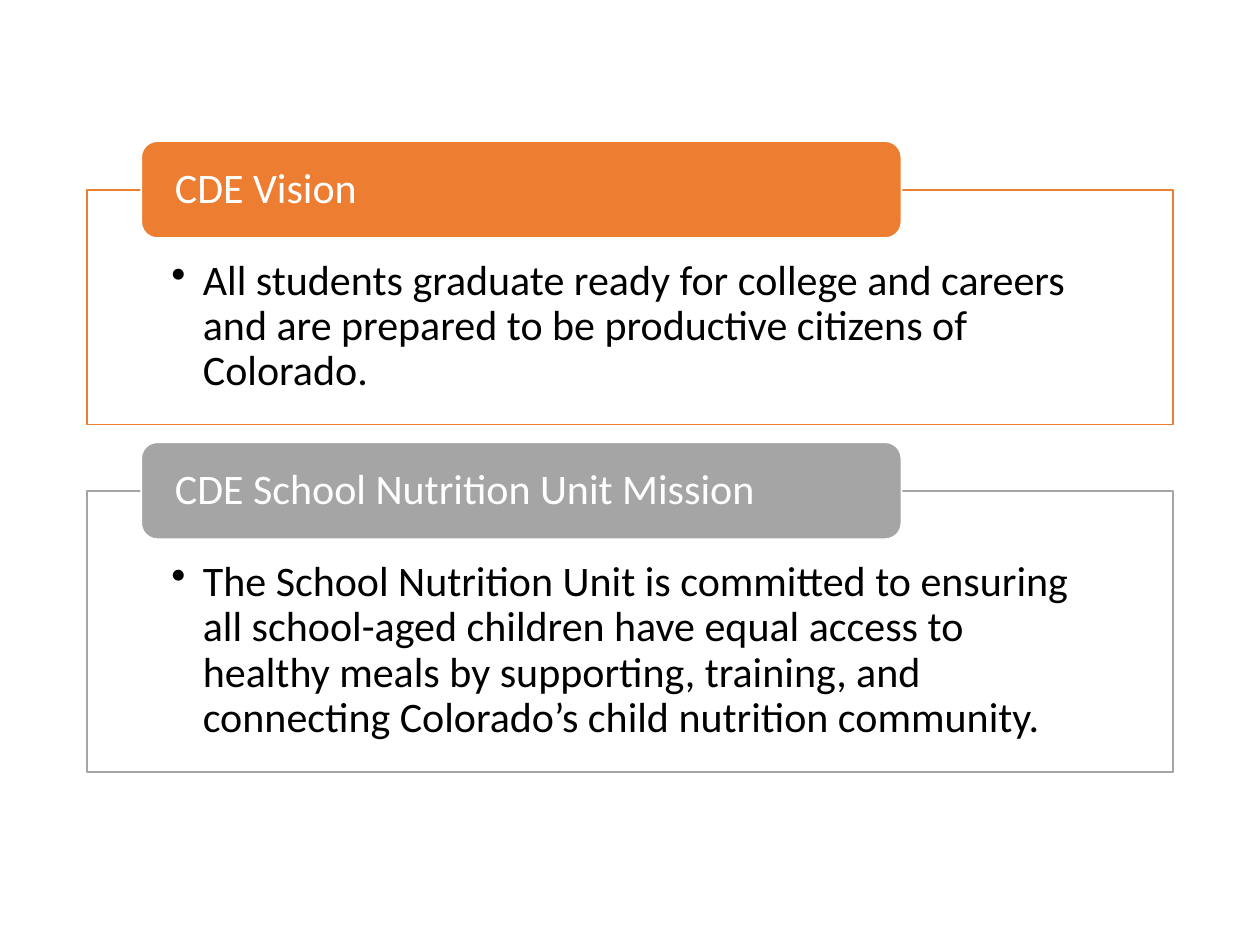
from dataclasses import dataclass

from lxml.etree import SubElement
from pptx import Presentation
from pptx.dml.color import RGBColor as Rgb
from pptx.enum.shapes import MSO_SHAPE as Preset
from pptx.enum.text import MSO_ANCHOR as Anchor, PP_ALIGN as Align
from pptx.oxml.ns import qn
from pptx.util import Inches, Pt


@dataclass(frozen=True)
class Theme:
    font: str = "Calibri"
    size: float = 24
    line: float = 1
    spacing: float = 0.9
    paper: str = "FFFFFF"
    ink: str = "000000"
    orange: str = "ED7D31"
    grey: str = "A5A5A5"


THEME = Theme()
LEFT, TOP, WIDTH, GAP = 0.69, 1.12, 8.62, 0.14
TAB_HEIGHT = 0.77
TAB_INDENT, TAB_SHARE = 0.05, 0.7  # shares of the section width
HANGING = 0.25

SECTIONS = [
    ("CDE Vision", THEME.orange, 2.25,
     "All students graduate ready for college and careers and are prepared "
     "to be productive citizens of Colorado."),
    ("CDE School Nutrition Unit Mission", THEME.grey, 2.62,
     "The School Nutrition Unit is committed to ensuring all school-aged "
     "children have equal access to healthy meals by supporting, training, "
     "and connecting Colorado’s child nutrition community."),
]


def set_all(target, values):
    for name, value in values.items():
        setattr(target, name, value)


def add_block(slide, preset, box, fill, outline, insets, anchor):
    block = slide.shapes.add_shape(preset, *map(Inches, box))
    block.shadow.inherit = False
    block.fill.solid()
    block.fill.fore_color.rgb = Rgb.from_string(fill)
    block.line.color.rgb = Rgb.from_string(outline)
    block.line.width = Pt(THEME.line)
    sides = ("margin_left", "margin_top", "margin_right", "margin_bottom")
    set_all(block.text_frame, dict(zip(sides, map(Inches, insets))))
    set_all(block.text_frame, {"word_wrap": True, "vertical_anchor": anchor})
    return block


def write(block, wording, color, bulleted=False):
    paragraph = block.text_frame.paragraphs[0]
    paragraph.text = wording
    set_all(paragraph, {"alignment": Align.LEFT, "line_spacing": THEME.spacing})
    if bulleted:
        paragraph.level = 1
        properties = paragraph._p.get_or_add_pPr()
        properties.set("marL", str(Inches(HANGING)))
        properties.set("indent", str(-Inches(HANGING)))
        SubElement(properties, qn("a:buChar")).set("char", "•")
    font = paragraph.runs[0].font
    set_all(font, {"name": THEME.font, "size": Pt(THEME.size)})
    font.color.rgb = Rgb.from_string(color)


def add_section(slide, box, heading, accent, statement):
    left, top, width, height = box
    # Outlined panel, starting halfway down the tab
    overlap = TAB_HEIGHT / 2
    panel = add_block(slide, Preset.RECTANGLE,
                      (left, top + overlap, width, height - overlap),
                      THEME.paper, accent, (0.67, 0.55, 0.67, 0.19), Anchor.TOP)
    write(panel, statement, THEME.ink, bulleted=True)
    # Heading tab
    tab = add_block(slide, Preset.ROUNDED_RECTANGLE,
                    (left + width * TAB_INDENT, top, width * TAB_SHARE, TAB_HEIGHT),
                    accent, THEME.paper, (0.23, 0, 0.23, 0), Anchor.MIDDLE)
    write(tab, heading, THEME.paper)


def main():
    deck = Presentation()
    set_all(deck, {"slide_width": Inches(10), "slide_height": Inches(7.5)})
    slide = deck.slides.add_slide(deck.slide_layouts[6])
    # Sections stacked with an equal gap
    top = TOP
    for heading, accent, height, statement in SECTIONS:
        add_section(slide, (LEFT, top, WIDTH, height), heading, accent, statement)
        top += height + GAP
    deck.save("out.pptx")


if __name__ == "__main__":
    main()
